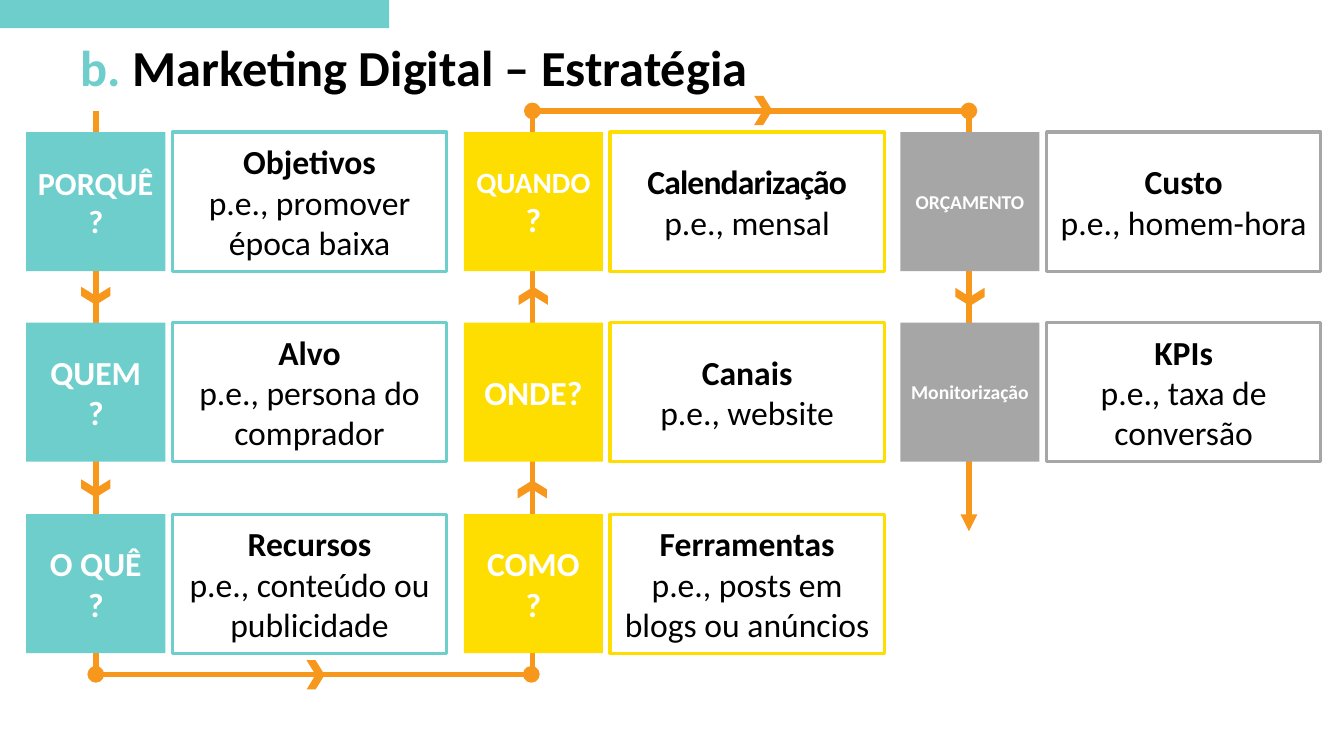
from pptx import Presentation
from pptx.util import Inches, Pt
from pptx.dml.color import RGBColor
from pptx.enum.shapes import MSO_SHAPE, MSO_CONNECTOR
from pptx.enum.text import MSO_ANCHOR, PP_ALIGN
from pptx.oxml.ns import qn
from lxml import etree

TEAL, GOLD, GRAY, FLOW = "6ECECB", "FDDE00", "A6A6A6", "F7981D"


def rgb(code):
    return RGBColor.from_string(code)


def add_box(kind, left, top, width, height, fill=None, edge=None):
    box = slide.shapes.add_shape(kind, Inches(left), Inches(top),
                                 Inches(width), Inches(height))
    box.shadow.inherit = False
    if fill:
        box.fill.solid()
        box.fill.fore_color.rgb = rgb(fill)
    else:
        box.fill.background()
    if edge:
        box.line.color.rgb = rgb(edge)
        box.line.width = Pt(2.25)
    else:
        box.line.fill.background()
    return box


deck = Presentation()
deck.slide_width, deck.slide_height = Inches(13.33), Inches(7.5)
slide = deck.slides.add_slide(deck.slide_layouts[6])

# Top band
add_box(MSO_SHAPE.RECTANGLE, 0, 0, 3.86, 0.28, TEAL)

# Flow lines: start, end, end mark and its shape
flows = [
    (0.95, 1.1, 0.95, 6.69, "tailEnd", "oval"),
    (5.28, 1.1, 5.28, 6.69, "headEnd", "oval"),
    (9.61, 1.1, 9.61, 5.27, "tailEnd", "triangle"),
    (0.98, 6.69, 5.27, 6.69, "tailEnd", "oval"),
    (5.32, 1.1, 9.61, 1.1, "tailEnd", "oval"),
]
for x1, y1, x2, y2, end, mark in flows:
    line = slide.shapes.add_connector(MSO_CONNECTOR.STRAIGHT, Inches(x1),
                                      Inches(y1), Inches(x2), Inches(y2))
    line.line.color.rgb = rgb(FLOW)
    line.line.width = Pt(4)
    etree.SubElement(line.line._get_or_add_ln(), qn("a:" + end), type=mark)
    etree.SubElement(line._element.spPr, qn("a:effectLst"))

# Chevrons along the flow
signs = [(0.86, 2.79, 90), (0.86, 4.7, 90), (3.04, 6.55, 0), (5.19, 4.71, 270),
         (5.2, 2.79, 270), (7.48, 0.95, 0), (9.53, 2.8, 90)]
for left, top, turn in signs:
    add_box(MSO_SHAPE.CHEVRON, left, top, 0.18, 0.29, FLOW).rotation = turn

# Title
title = slide.shapes.add_textbox(Inches(0.7), Inches(0.38), Inches(6.96), Inches(0.76))
title.text_frame.word_wrap = True
para = title.text_frame.paragraphs[0]
para.line_spacing = 0.9
for text, color in [("b.", TEAL), (" Marketing Digital – Estratégia", "000000")]:
    run = para.add_run()
    run.text = text
    run.font.name, run.font.size, run.font.bold = "Calibri", Pt(36), True
    run.font.color.rgb = rgb(color)

# Steps by column, top to bottom: label, label size, heading, example
rows = [1.31, 3.2, 5.1]
columns = [
    (0.26, TEAL, [
        ("PORQUÊ\n?", 23, "Objetivos", "p.e., promover época baixa"),
        ("QUEM\n?", 24, "Alvo", "p.e., persona do comprador"),
        ("O QUÊ\n?", 24, "Recursos", "p.e., conteúdo ou publicidade")]),
    (4.6, GOLD, [
        ("QUANDO\n?", 21, "Calendarização", "p.e., mensal"),
        ("ONDE?", 24, "Canais", "p.e., website"),
        ("COMO\n?", 24, "Ferramentas", "p.e., posts em blogs ou anúncios")]),
    (8.93, GRAY, [
        ("ORÇAMENTO", 14, "Custo", "p.e., homem-hora"),
        ("Monitorização", 14, "KPIs", "p.e., taxa de conversão")]),
]
for left, color, steps in columns:
    for top, (label, size, head, hint) in zip(rows, steps):
        tile = add_box(MSO_SHAPE.RECTANGLE, left, top, 1.38, 1.38, fill=color)
        card = add_box(MSO_SHAPE.RECTANGLE, left + 1.45, top, 2.72, 1.38, edge=color)
        for box, text, ink in [(tile, label, "FFFFFF"),
                               (card, head + "\n" + hint, "000000")]:
            frame = box.text_frame
            frame.text = text
            frame.word_wrap = True
            frame.vertical_anchor = MSO_ANCHOR.MIDDLE
            for para in frame.paragraphs:
                para.alignment = PP_ALIGN.CENTER
                run = para.runs[0]
                run.font.name = "Calibri"
                run.font.size = Pt(size if box is tile and run.text != "?" else 24)
                run.font.bold = run.text != hint
                run.font.color.rgb = rgb(ink)
                # The longest heading is set slightly tighter
                if run.text == "Calendarização":
                    run.font._element.set("spc", "-60")
        # The first label keeps one size on both lines
        if label.startswith("PORQUÊ"):
            tile.text_frame.paragraphs[1].runs[0].font.size = Pt(size)

deck.save("out.pptx")
